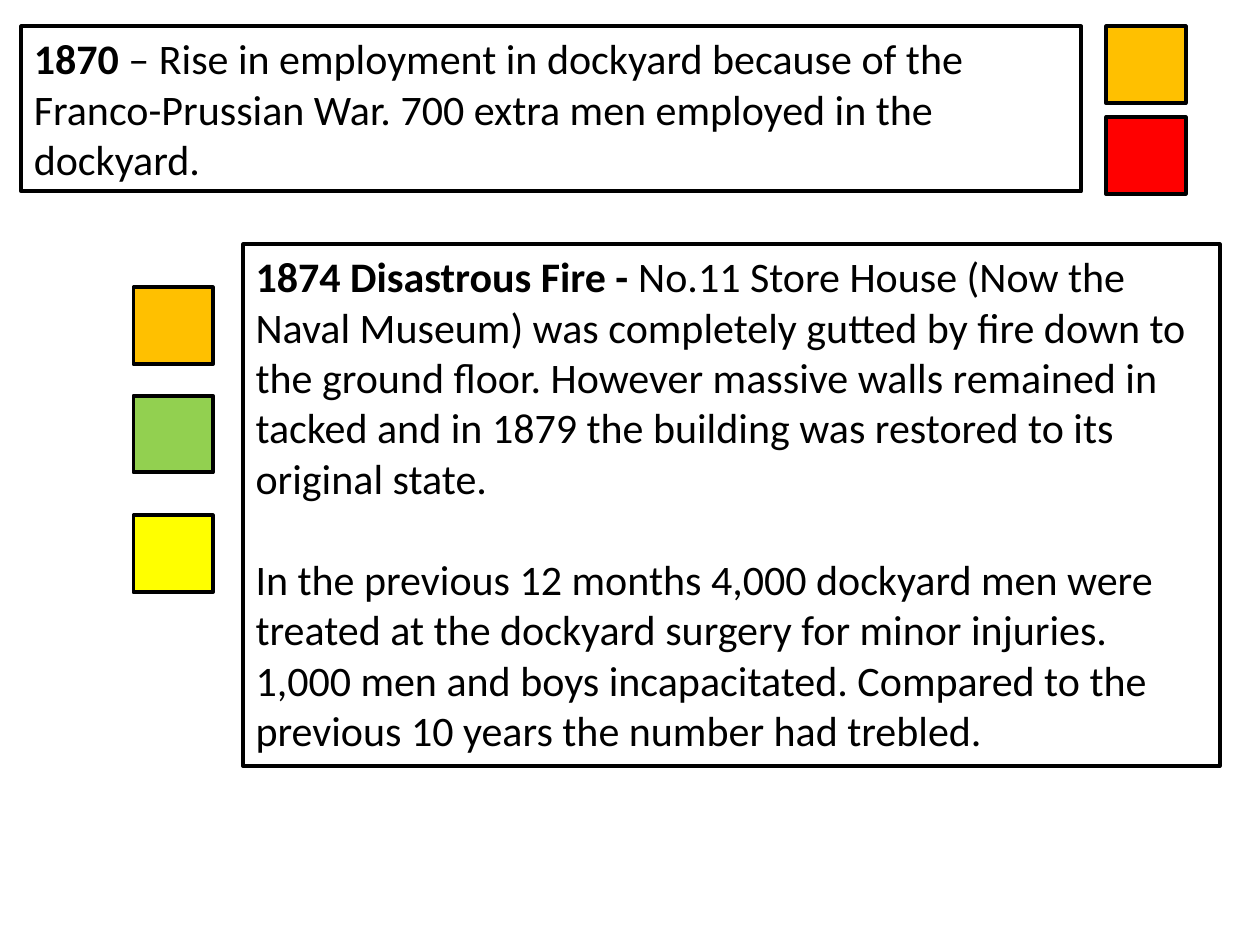
from pptx import Presentation
from pptx.dml.color import RGBColor
from pptx.enum.shapes import MSO_SHAPE
from pptx.enum.text import MSO_ANCHOR, MSO_AUTO_SIZE, PP_ALIGN
from pptx.util import Inches, Pt

BLACK = RGBColor(0, 0, 0)
WHITE = RGBColor(255, 255, 255)
AMBER = RGBColor(255, 192, 0)
RED = RGBColor(255, 0, 0)
GREEN = RGBColor(146, 208, 80)
YELLOW = RGBColor(255, 255, 0)

FRAME_FORMAT = {
    "word_wrap": True,
    "auto_size": MSO_AUTO_SIZE.SHAPE_TO_FIT_TEXT,
    "vertical_anchor": MSO_ANCHOR.TOP,
}
FONT_FORMAT = {"name": "Calibri", "size": Pt(24)}

EVENTS = [
    ((0.17, 0.21, 8.41, 1.31), [
        [("1870 ", True),
         ("– Rise in employment in dockyard because of the Franco-Prussian War. "
          "700 extra men employed in the dockyard.", False)],
    ]),
    ((1.93, 1.94, 7.75, 4.14), [
        [("1874 Disastrous Fire - ", True),
         ("No.11 Store House (Now the Naval Museum) was completely gutted by fire "
          "down to the ground floor. However massive walls remained in tacked and "
          "in 1879 the building was restored to its original state.", False)],
        [("In the previous 12 months 4,000 dockyard men were treated at the dockyard "
          "surgery for minor injuries. 1,000 men and boys incapacitated. Compared to "
          "the previous 10 years the number had trebled.", False)],
    ]),
]
MARKERS = [
    (8.78, 0.21, AMBER),
    (8.78, 0.93, RED),
    (1.06, 2.28, AMBER),
    (1.06, 3.14, GREEN),
    (1.06, 4.09, YELLOW),
]

deck = Presentation()
deck.slide_width = Inches(10)
deck.slide_height = Inches(7.5)
page = deck.slides.add_slide(deck.slide_layouts[6])


def add_box(left, top, width, height, color):
    box = page.shapes.add_shape(
        MSO_SHAPE.RECTANGLE, Inches(left), Inches(top), Inches(width), Inches(height))
    box.shadow.inherit = False
    box.fill.solid()
    box.fill.fore_color.rgb = color
    box.line.color.rgb = BLACK
    box.line.width = Pt(2.25)
    return box


for position, paragraphs in EVENTS:
    frame = add_box(*position, WHITE).text_frame
    for name, value in FRAME_FORMAT.items():
        setattr(frame, name, value)
    for index, spans in enumerate(paragraphs):
        para = frame.add_paragraph() if index else frame.paragraphs[0]
        para.alignment = PP_ALIGN.LEFT
        para.space_before = Pt(29 if index else 0)
        for text, bold in spans:
            span = para.add_run()
            span.text = text
            span.font.bold = bold
            span.font.color.rgb = BLACK
            for name, value in FONT_FORMAT.items():
                setattr(span.font, name, value)

for left, top, color in MARKERS:
    add_box(left, top, 0.63, 0.61, color)

deck.save("out.pptx")
